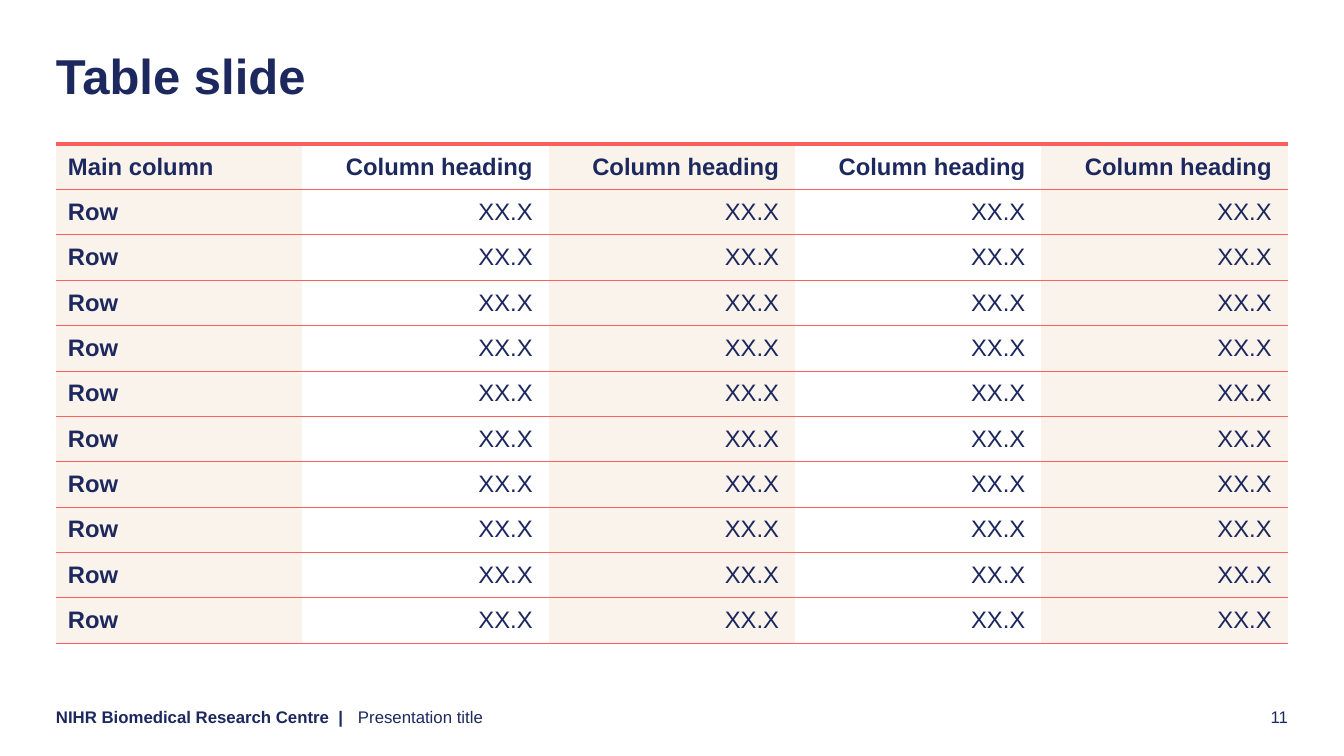
from lxml.etree import SubElement
from pptx import Presentation
from pptx.dml.color import RGBColor
from pptx.enum.text import MSO_ANCHOR as Anchor, MSO_AUTO_SIZE as AutoSize, PP_ALIGN as Align
from pptx.oxml.ns import qn
from pptx.util import Emu, Pt

EMU_PER_PX = 914400 / 100.8
NAVY = RGBColor(0x1C, 0x28, 0x5E)
CORAL = RGBColor(0xFC, 0x5D, 0x5D)
CREAM = RGBColor(0xFA, 0xF3, 0xEB)
WHITE = RGBColor(0xFF, 0xFF, 0xFF)


def px(length):
    return Emu(round(length * EMU_PER_PX))


class Page:
    font_name = "Arial"
    ink = NAVY
    cell_insets = (12, 8, 16, 8)

    def __init__(self, deck):
        self.slide = deck.slides.add_slide(deck.slide_layouts[5])

    def add_text(self, frame, text, size, bold=False, align=Align.LEFT):
        para = frame.paragraphs[0]
        para.alignment = align
        span = para.add_run()
        span.text = text
        font = span.font
        font.name, font.size, font.bold = self.font_name, Pt(size), bold
        font.color.rgb = self.ink
        return para

    def set_insets(self, target, insets):
        left, top, right, bottom = map(px, insets)
        target.margin_left, target.margin_top = left, top
        target.margin_right, target.margin_bottom = right, bottom

    def prepare_frame(self, box):
        frame = box.text_frame
        frame.word_wrap = True
        frame.auto_size = AutoSize.NONE
        frame.vertical_anchor = Anchor.TOP
        self.set_insets(frame, (0, 0, 0, 0))
        return frame

    def title(self, text, left, top, width, height):
        box = self.slide.shapes.title
        box.left, box.top, box.width, box.height = map(px, (left, top, width, height))
        para = self.add_text(self.prepare_frame(box), text, 35, bold=True)
        para.line_spacing = 0.9

    def label(self, text, left, top, width, height, **style):
        box = self.slide.shapes.add_textbox(*map(px, (left, top, width, height)))
        self.add_text(self.prepare_frame(box), text, 12, **style)

    def border(self, cell, side, points):
        """Rule one side of a cell, or clear it when points is 0."""
        line = SubElement(cell._tc.get_or_add_tcPr(), qn(f"a:ln{side}"), w=str(Pt(points)))
        if points:
            fill = SubElement(line, qn("a:solidFill"))
            SubElement(fill, qn("a:srgbClr"), val=str(CORAL))
        else:
            SubElement(line, qn("a:noFill"))

    def table(self, rows, left, top, width, height):
        frame = self.slide.shapes.add_table(
            len(rows), len(rows[0]), *map(px, (left, top, width, height)))
        table = frame.table
        table.horz_banding = False
        for row, texts in enumerate(rows):
            for column, text in enumerate(texts):
                cell = table.cell(row, column)
                self.set_insets(cell, self.cell_insets)
                cell.vertical_anchor = Anchor.MIDDLE
                rules = {"L": 0, "R": 0, "T": 0.5 if row else 3, "B": 0.5}
                for side, points in rules.items():
                    self.border(cell, side, points)
                cell.fill.solid()
                cell.fill.fore_color.rgb = WHITE if column % 2 else CREAM
                self.add_text(cell.text_frame, text, 17,
                              bold=row == 0 or column == 0,
                              align=Align.RIGHT if column else Align.LEFT)


def main():
    deck = Presentation()
    deck.slide_width, deck.slide_height = px(1344), px(756)
    page = Page(deck)
    page.label("NIHR Biomedical Research Centre  |", 56, 707, 310, 20, bold=True)
    page.title("Table slide", 56, 52, 1192, 68)
    headings = ["Main column"] + ["Column heading"] * 4
    values = ["Row"] + ["XX.X"] * 4
    page.table([headings] + [values] * 10, 56, 144, 1232, 499)
    page.label("11", 1189, 707, 99, 20, align=Align.RIGHT)
    page.label("Presentation title", 358, 707, 438, 20)
    deck.save("out.pptx")


if __name__ == "__main__":
    main()
